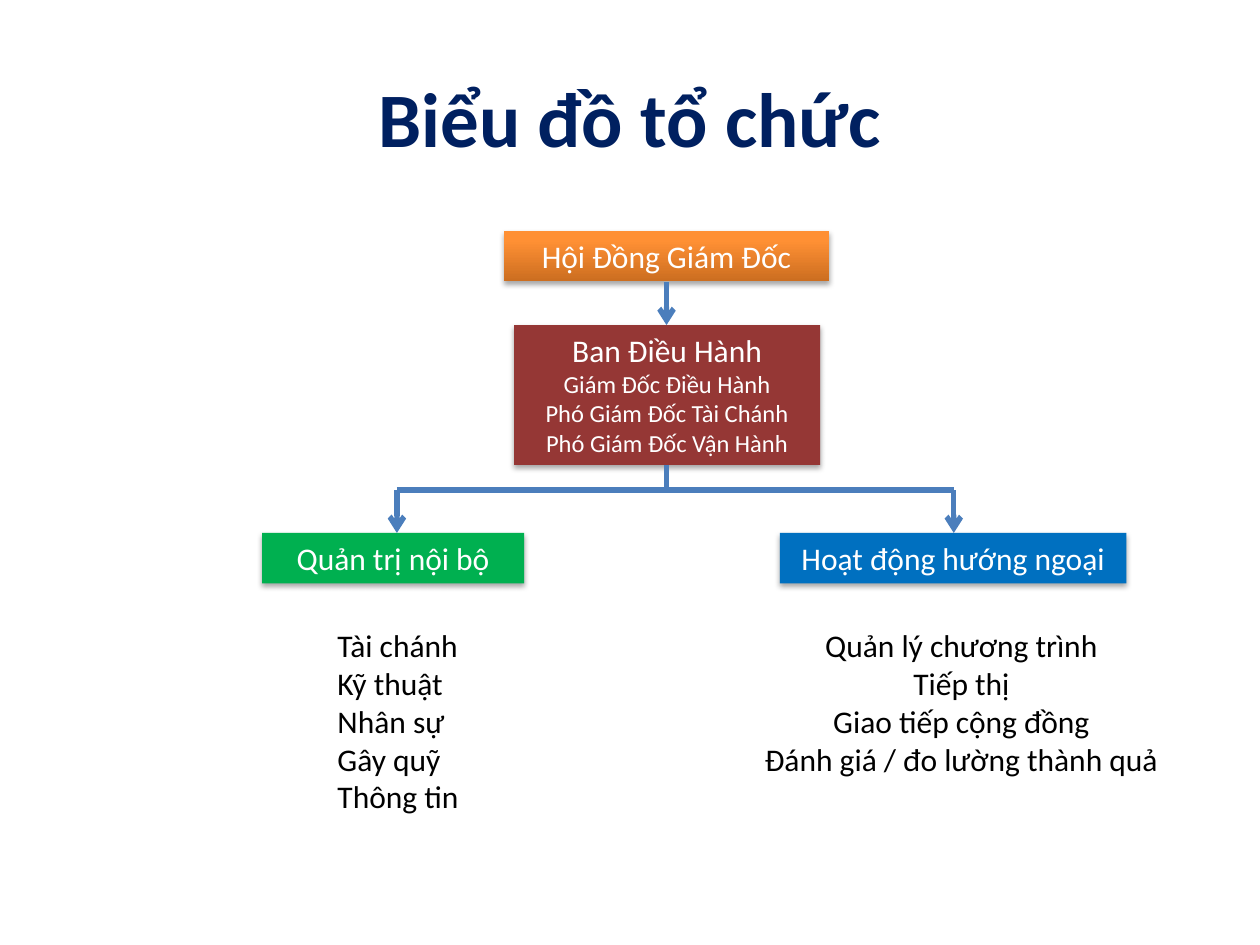
from copy import deepcopy
from dataclasses import dataclass

from lxml import etree
from pptx import Presentation
from pptx.dml.color import RGBColor
from pptx.enum.shapes import MSO_CONNECTOR, MSO_SHAPE
from pptx.enum.text import MSO_ANCHOR, PP_ALIGN
from pptx.oxml.ns import qn
from pptx.util import Inches, Pt

RECTANGLE = MSO_SHAPE.RECTANGLE
STRAIGHT = MSO_CONNECTOR.STRAIGHT
TOP, MIDDLE = MSO_ANCHOR.TOP, MSO_ANCHOR.MIDDLE
LEFT, CENTER = PP_ALIGN.LEFT, PP_ALIGN.CENTER


@dataclass(frozen=True)
class Theme:
    font: str = "Calibri"
    title_size: int = 44
    body_size: int = 18
    role_size: int = 14
    line_width: int = 3
    title: str = "002060"
    text: str = "000000"
    box_text: str = "FFFFFF"
    line: str = "4B7EBC"
    board: tuple = ((0, "CC6E20"), (0.8, "FF9034"), (1, "FF9136"))
    management: str = "953735"
    internal: str = "00B050"
    external: str = "0070C0"


class ChartSlide:
    """Draws an organisation chart on one slide in a shared style."""

    def __init__(self, slide, theme):
        self.slide = slide
        self.shapes = slide.shapes
        self.theme = theme

    def set_text(self, frame, lines, sizes, color, align=CENTER, anchor=TOP, bold=False):
        frame.word_wrap = True
        frame.vertical_anchor = anchor
        frame.text = "\n".join(lines)
        for para, size in zip(frame.paragraphs, sizes):
            para.alignment = align
            for span in para.runs:
                span.font.name = self.theme.font
                span.font.size = Pt(size)
                span.font.bold = bold
                span.font.color.rgb = RGBColor.from_string(color)

    def add_title(self, text, left, top, width, height):
        box = self.shapes.title
        box.left, box.top = Inches(left), Inches(top)
        box.width, box.height = Inches(width), Inches(height)
        self.set_text(box.text_frame, [text], [self.theme.title_size],
                      self.theme.title, anchor=MIDDLE, bold=True)

    def add_box(self, lines, fill, left, top, width, height):
        box = self.shapes.add_shape(
            RECTANGLE, Inches(left), Inches(top), Inches(width), Inches(height))
        box.line.fill.background()
        if isinstance(fill, str):
            box.fill.solid()
            box.fill.fore_color.rgb = RGBColor.from_string(fill)
        else:
            self.set_gradient(box, fill)
        self.set_shadow(box)
        sizes = [self.theme.body_size] + [self.theme.role_size] * (len(lines) - 1)
        self.set_text(box.text_frame, lines, sizes, self.theme.box_text)

    def set_gradient(self, box, stops):
        box.fill.gradient()
        box.fill.gradient_angle = 90
        stop_list = box._element.spPr.find(qn("a:gradFill")).find(qn("a:gsLst"))
        while len(stop_list) < len(stops):
            stop_list.append(deepcopy(stop_list[0]))
        for stop, (position, color) in zip(box.fill.gradient_stops, stops):
            stop.position = position
            stop.color.rgb = RGBColor.from_string(color)

    def set_shadow(self, box):
        box.shadow.inherit = False
        effects = box._element.spPr.find(qn("a:effectLst"))
        outer = etree.SubElement(
            effects, qn("a:outerShdw"), blurRad=str(Pt(3.1)), dist=str(Pt(1.8)),
            dir="5400000", rotWithShape="0")
        color = etree.SubElement(outer, qn("a:srgbClr"), val="000000")
        etree.SubElement(color, qn("a:alpha"), val="35000")

    def add_list(self, lines, left, top, width, height, align=CENTER, indent=0):
        box = self.shapes.add_textbox(
            Inches(left), Inches(top), Inches(width), Inches(height))
        frame = box.text_frame
        self.set_text(frame, lines, [self.theme.body_size] * len(lines),
                      self.theme.text, align)
        if indent:
            for para in frame.paragraphs:
                properties = para._p.get_or_add_pPr()
                properties.set("marL", str(Inches(indent)))
                properties.set("indent", "0")

    def add_line(self, start, end, arrow=False):
        connector = self.shapes.add_connector(
            STRAIGHT, *(Inches(value) for value in (*start, *end)))
        connector.line.color.rgb = RGBColor.from_string(self.theme.line)
        connector.line.width = Pt(self.theme.line_width)
        properties = connector._element.spPr
        if arrow:
            etree.SubElement(properties.find(qn("a:ln")), qn("a:tailEnd"), type="arrow")
        etree.SubElement(properties, qn("a:effectLst"))


def main():
    theme = Theme()
    deck = Presentation()
    deck.slide_width, deck.slide_height = Inches(10), Inches(7.5)
    page = ChartSlide(deck.slides.add_slide(deck.slide_layouts[5]), theme)

    trunk, internal, external = 5.29, 3.15, 7.57
    branch_top, unit_top, list_top = 3.89, 4.23, 4.92

    page.add_title("Biểu đồ tổ chức", 0.5, 0.3, 9, 1.25)
    page.add_box(["Hội Đồng Giám Đốc"], theme.board, 4, 1.83, 2.58, 0.4)
    page.add_box(["Ban Điều Hành", "Giám Đốc Điều Hành", "Phó Giám Đốc Tài Chánh",
                  "Phó Giám Đốc Vận Hành"], theme.management, 4.08, 2.58, 2.43, 1.11)
    page.add_box(["Quản trị nội bộ"], theme.internal, 2.08, unit_top, 2.08, 0.4)
    page.add_box(["Hoạt động hướng ngoại"], theme.external, 6.19, unit_top, 2.75, 0.4)

    page.add_list(["Tài chánh", "Kỹ thuật", "Nhân sự", "Gây quỹ", "Thông tin"],
                  2.08, list_top, 2.08, 1.92, LEFT, 0.5)
    page.add_list(["Quản lý chương trình", "Tiếp thị", "Giao tiếp cộng đồng",
                   "Đánh giá / đo lường thành quả"], 5.92, list_top, 3.42, 1.62)

    page.add_line((trunk, 2.24), (trunk, 2.58), arrow=True)
    for center in (internal, external):
        page.add_line((center, branch_top), (center, unit_top), arrow=True)
    page.add_line((internal, branch_top), (external, branch_top))
    page.add_line((trunk, 3.69), (trunk, branch_top))
    deck.save("out.pptx")


if __name__ == "__main__":
    main()
